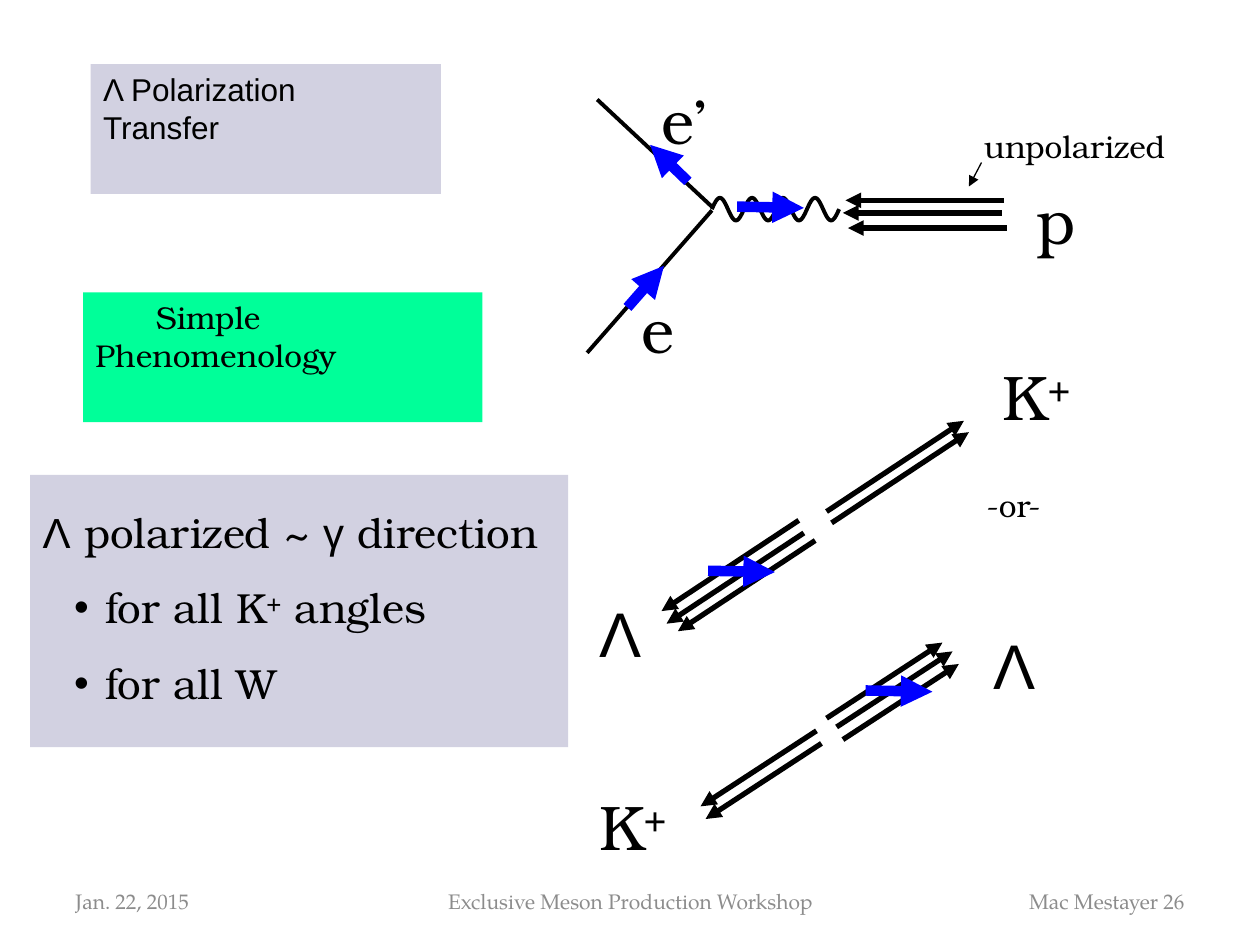
from dataclasses import dataclass
from math import pi, sin

from lxml.etree import SubElement
from pptx import Presentation
from pptx.dml.color import RGBColor
from pptx.enum.shapes import MSO_CONNECTOR, MSO_SHAPE
from pptx.enum.text import MSO_ANCHOR, MSO_AUTO_SIZE, PP_ALIGN
from pptx.oxml.ns import qn
from pptx.util import Inches, Pt


@dataclass(frozen=True)
class Theme:
    black: RGBColor = RGBColor(0, 0, 0)
    spin: RGBColor = RGBColor(0, 0, 255)
    footer: RGBColor = RGBColor(0x8C, 0x8C, 0x8C)
    lavender: RGBColor = RGBColor(0xD2, 0xD1, 0xE1)
    green: RGBColor = RGBColor(0, 255, 0x99)
    sans: str = "Arial"
    serif: str = "TeX Gyre Bonum"
    footer_font: str = "TeX Gyre Pagella"
    particle: int = 36
    statement: int = 24
    body: int = 18
    small: int = 12
    quark_line: float = 3
    track_line: float = 2.25
    spin_line: float = 6
    pointer_line: float = 0.75


THEME = Theme()


def style(paragraph, size, font=THEME.serif, color=THEME.black):
    paragraph.font.size = Pt(size)
    paragraph.font.name = font
    paragraph.font.color.rgb = color


def add_line(shapes, start, end, width, color=THEME.black, arrow=True):
    line = shapes.add_connector(
        MSO_CONNECTOR.STRAIGHT, *(Inches(value) for value in (*start, *end)))
    line.line.width = Pt(width)
    line.line.color.rgb = color
    if arrow:
        SubElement(line.line._get_or_add_ln(), qn("a:tailEnd"), type="triangle")
    SubElement(line._element.spPr, qn("a:effectLst"))


def add_spin(shapes, start, end):
    add_line(shapes, start, end, THEME.spin_line, THEME.spin)


def add_label(shapes, box, text, size=THEME.particle, font=THEME.serif, superscript=""):
    label = shapes.add_textbox(*(Inches(value) for value in box))
    frame = label.text_frame
    frame.word_wrap = False
    frame.auto_size = MSO_AUTO_SIZE.SHAPE_TO_FIT_TEXT
    paragraph = frame.paragraphs[0]
    style(paragraph, size, font)
    add_runs(paragraph, [(text, None), (superscript, None)])


def add_runs(paragraph, parts):
    """Add (text, font) runs; a lone plus sign is raised."""
    for text, font in parts:
        if not text:
            continue
        run = paragraph.add_run()
        run.text = text
        if font:
            run.font.name = font
        if text == "+":
            run.font._element.set("baseline", "30000")


def add_panel(slide, box, fill):
    panel = slide.shapes.add_shape(
        MSO_SHAPE.RECTANGLE, *(Inches(value) for value in box))
    panel.shadow.inherit = False
    panel.fill.solid()
    panel.fill.fore_color.rgb = fill
    panel.line.fill.background()
    panel.text_frame.word_wrap = True
    panel.text_frame.vertical_anchor = MSO_ANCHOR.TOP
    return panel.text_frame


def add_heading(slide, box, fill, lines, font, first_indent=0):
    frame = add_panel(slide, box, fill)
    frame.text = "\n".join(lines)
    for paragraph in frame.paragraphs:
        paragraph.alignment = PP_ALIGN.LEFT
        style(paragraph, THEME.body, font)
    frame.paragraphs[0]._p.get_or_add_pPr().set("marL", str(Inches(first_indent)))


def add_statement(slide, box):
    frame = add_panel(slide, box, THEME.lavender)
    lines = [
        [("Λ", THEME.sans), (" polarized ~ ", None), ("γ", THEME.sans), (" direction", None)],
        [("for all K", None), ("+", None), (" angles", None)],
        [("for all W", None)],
    ]
    for index, parts in enumerate(lines):
        paragraph = frame.add_paragraph() if index else frame.paragraphs[0]
        paragraph.alignment = PP_ALIGN.LEFT
        paragraph.line_spacing = 1.5
        style(paragraph, THEME.statement)
        add_runs(paragraph, parts)
        if index:
            paragraph.level = 1
            properties = paragraph._p.get_or_add_pPr()
            properties.set("marL", str(Inches(0.5)))
            properties.set("indent", str(Inches(-0.25)))
            bullet_font = properties.makeelement(qn("a:buFont"), typeface=THEME.sans)
            bullet = properties.makeelement(qn("a:buChar"), char="•")
            properties.find(qn("a:defRPr")).addprevious(bullet_font)
            bullet_font.addnext(bullet)


def add_photon(shapes, left, middle, width=0.51, amplitude=0.09, cycles=2, steps=48):
    points = [
        (Inches(left + width * step / steps),
         Inches(middle - amplitude * sin(2 * pi * cycles * step / steps)))
        for step in range(steps + 1)
    ]
    builder = shapes.build_freeform(*points[0])
    builder.add_line_segments(points[1:], close=False)
    wave = builder.convert_to_shape()
    wave.shadow.inherit = False
    wave.fill.background()
    wave.line.width = Pt(THEME.track_line)
    wave.line.color.rgb = THEME.black


def add_scattering(slide, left, top):
    """Electron emits a photon, which meets the three quarks of the proton."""
    shapes = slide.shapes.add_group_shape().shapes

    def at(x, y):
        return left + x, top + y

    for start in (0.99, 1.49):
        add_photon(shapes, *at(start, 1.06))
    # Electron tracks
    add_line(shapes, at(0.99, 1.07), at(0, 2.2), THEME.track_line, arrow=False)
    add_line(shapes, at(1, 1.05), at(0.08, 0.19), THEME.track_line, arrow=False)
    # Proton quarks
    for x, y in ((2.03, 1.09), (2.05, 0.99), (2.07, 1.21)):
        add_line(shapes, at(x + 1.26, y), at(x, y), THEME.quark_line)
    for text, x, y, width in (("p", 3.47, 0.79, 0.51), ("e", 0.33, 1.66, 0.46),
                              ("e’", 0.49, 0, 0.57)):
        add_label(shapes, (*at(x, y), width, 0.7), text)
    # Spins
    for start, end in (((0.32, 1.84), (0.61, 1.51)), ((0.8, 0.84), (0.5, 0.55)),
                       ((1.19, 1.04), (1.72, 1.05))):
        add_spin(shapes, at(*start), at(*end))
    add_label(shapes, (*at(3.05, 0.36), 1.64, 0.4), "unpolarized", THEME.body)
    add_line(shapes, at(3.13, 0.69), at(3.03, 0.88), THEME.pointer_line)


def add_recoil(slide, left, top, lambda_quarks, kaon_quarks, flight,
               lambda_label, kaon_label, spin):
    """Lambda quarks fly along flight, kaon quarks the opposite way."""
    shapes = slide.shapes.add_group_shape().shapes
    for quarks, direction in ((lambda_quarks, 1), (kaon_quarks, -1)):
        for x, y in quarks:
            start = left + x, top + y
            end = start[0] + direction * flight[0], start[1] + direction * flight[1]
            add_line(shapes, start, end, THEME.quark_line)
    for (x, y), width, text, font, sign in (
            (kaon_label, 0.76, "K", THEME.serif, "+"),
            (lambda_label, 0.55, "Λ", THEME.sans, "")):
        add_label(shapes, (left + x, top + y, width, 0.7), text, font=font, superscript=sign)
    x, y = left + spin[0], top + spin[1]
    add_spin(slide.shapes, (x, y), (x + 0.53, y + 0.01))


def add_footer(slide, top, height):
    for left, width, text, alignment in (
            (0.5, 2.33, "Jan. 22, 2015", PP_ALIGN.LEFT),
            (3.42, 3.17, "Exclusive Meson Production Workshop", PP_ALIGN.CENTER),
            (7.17, 2.33, "Mac Mestayer 26", PP_ALIGN.RIGHT)):
        box = slide.shapes.add_textbox(Inches(left), Inches(top), Inches(width), Inches(height))
        frame = box.text_frame
        frame.word_wrap = True
        frame.vertical_anchor = MSO_ANCHOR.MIDDLE
        frame.text = text
        frame.paragraphs[0].alignment = alignment
        style(frame.paragraphs[0], THEME.small, THEME.footer_font, THEME.footer)


def main():
    presentation = Presentation()
    presentation.slide_width, presentation.slide_height = Inches(10), Inches(7.5)
    slide = presentation.slides.add_slide(presentation.slide_layouts[6])

    # Reaction diagrams
    add_scattering(slide, 4.66, 0.6)
    add_recoil(slide, 4.66, 4.92,
               lambda_quarks=((1.98, 0.85), (2.03, 0.95), (1.9, 0.78)),
               kaon_quarks=((1.86, 0.98), (1.82, 0.88)), flight=(0.92, -0.6),
               lambda_label=(3.13, 0), kaon_label=(0, 1.28), spin=(2.21, 0.56))
    add_recoil(slide, 4.66, 2.79,
               lambda_quarks=((1.72, 1.44), (1.68, 1.34), (1.81, 1.5)),
               kaon_quarks=((1.9, 1.27), (1.94, 1.36)), flight=(-1.09, 0.72),
               lambda_label=(0, 1.88), kaon_label=(3.2, 0), spin=(0.96, 1.74))
    add_label(slide.shapes, (7.73, 3.81, 0.9, 0.57), "-or-", THEME.body)

    # Text panels
    add_heading(slide, (0.72, 0.51, 2.78, 1.03), THEME.lavender,
                ("Λ Polarization", "Transfer"), THEME.sans)
    add_statement(slide, (0.24, 3.77, 4.27, 2.16))
    add_heading(slide, (0.66, 2.32, 3.17, 1.03), THEME.green,
                ("Simple", "Phenomenology"), THEME.serif, first_indent=0.48)

    add_footer(slide, 6.95, 0.4)
    presentation.save("out.pptx")


if __name__ == "__main__":
    main()
